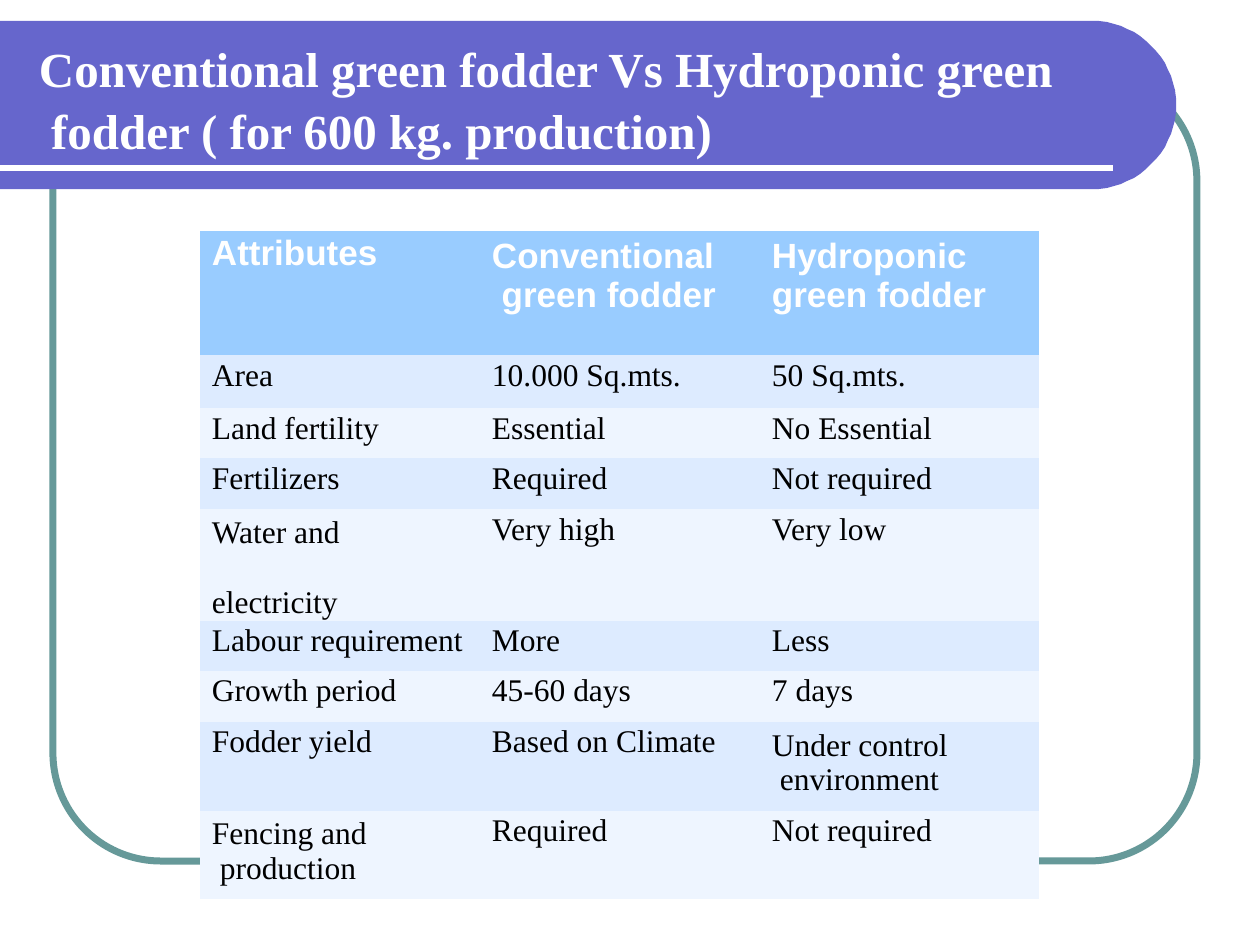
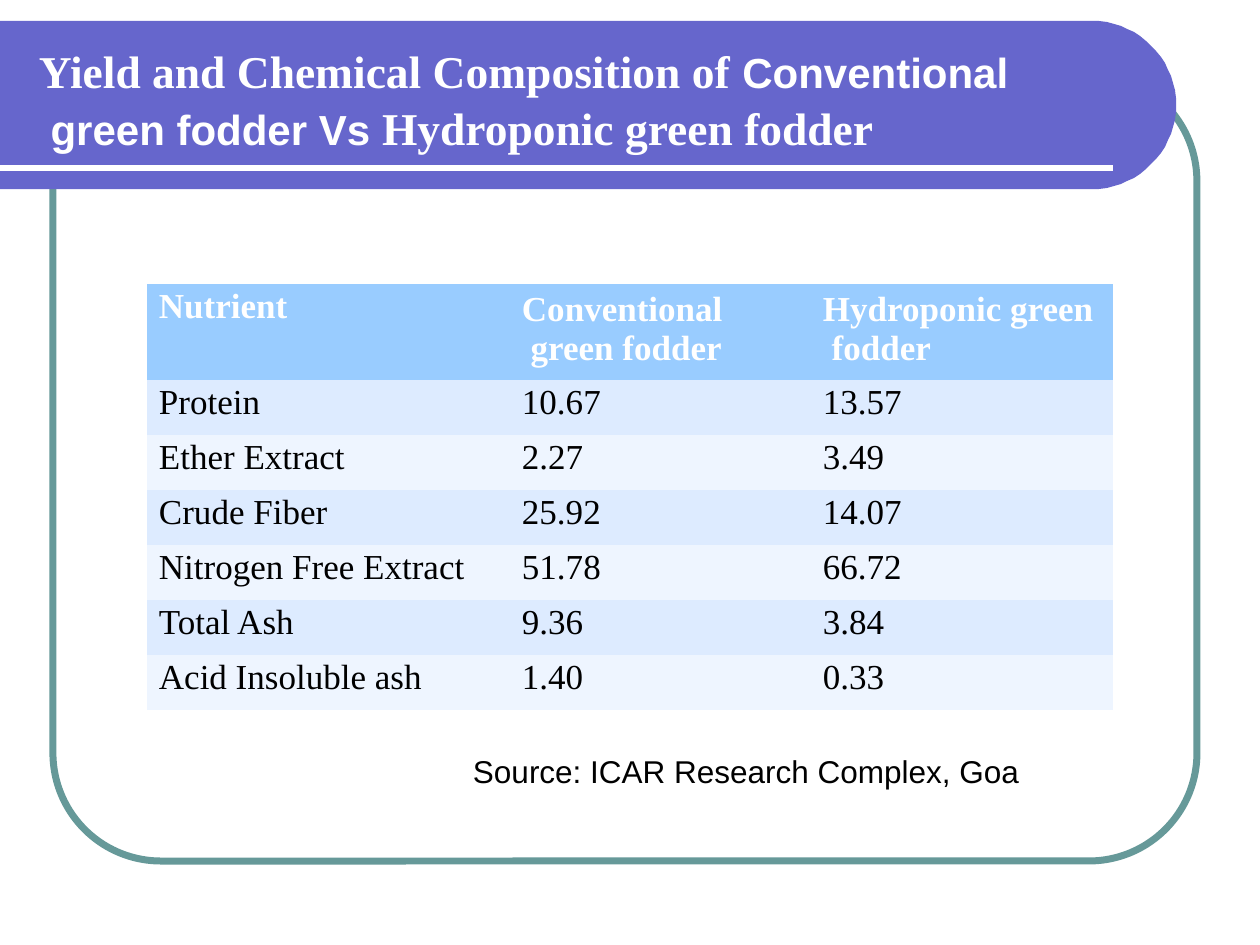
import math

import pptx
import pptx.dml.color
import pptx.enum.shapes
import pptx.oxml.ns
import pptx.util
from lxml import etree

EMU_PER_PX = 914400 / 126
WHITE = pptx.dml.color.RGBColor(0xFF, 0xFF, 0xFF)
BLACK = pptx.dml.color.RGBColor(0x00, 0x00, 0x00)
TEAL = pptx.dml.color.RGBColor(0x66, 0x99, 0x99)
VIOLET = pptx.dml.color.RGBColor(0x66, 0x66, 0xCC)
HEADER_BLUE = pptx.dml.color.RGBColor(0x99, 0xCC, 0xFF)
ROW_BLUES = [pptx.dml.color.RGBColor(0xDD, 0xEB, 0xFF),
             pptx.dml.color.RGBColor(0xEE, 0xF5, 0xFF)]
SERIF, SANS = "Times New Roman", "Arial"
PLAIN_TABLE_STYLE = "{2D5ABB26-0587-4C30-8999-92F81FD0307C}"


def px(length):
    return pptx.util.Emu(round(length * EMU_PER_PX))


def write(paragraph, text, size=18, font=SERIF, color=BLACK, bold=False):
    """Append text to the paragraph; each newline becomes a line break."""
    for i, line in enumerate(text.split("\n")):
        if i:
            paragraph.add_line_break()
        run = paragraph.add_run()
        run.text = line
        run.font.size = pptx.util.Pt(size)
        run.font.name = font
        run.font.color.rgb = color
        run.font.bold = bold


# A newline breaks the line; a double newline starts a spaced paragraph.
pages = [
    {
        "title": [("Conventional green fodder Vs Hydroponic green\n"
                   " fodder ( for 600 kg. production)", 28, SERIF)],
        "title_top": 36,
        "table_at": (200, 231),
        "columns": [278, 266, 295],
        "row_heights": [124, 53, 50, 51, 112, 50, 51, 89, 88],
        "indents": [12, 14, 28],
        "header_font": SANS,
        "body_size": 18,
        "rows": [
            ("Attributes", "Conventional\n green fodder", "Hydroponic\ngreen fodder"),
            ("Area", "10.000 Sq.mts.", "50 Sq.mts."),
            ("Land fertility", "Essential", "No Essential"),
            ("Fertilizers", "Required", "Not required"),
            ("Water and\n\nelectricity", "Very high", "Very low"),
            ("Labour requirement", "More", "Less"),
            ("Growth period", "45-60 days", "7 days"),
            ("Fodder yield", "Based on Climate", "Under control\n environment"),
            ("Fencing and\n production", "Required", "Not required"),
        ],
    },
    {
        "title": [("Yield and Chemical Composition of ", 26, SERIF),
                  ("Conventional\n green fodder Vs ", 24, SANS),
                  ("Hydroponic green fodder", 26, SERIF)],
        "title_top": 40,
        "table_at": (147, 284),
        "columns": [347, 279, 340],
        "row_heights": [96] + [55] * 6,
        "indents": [12, 28, 50],
        "header_font": SERIF,
        "body_size": 20,
        "rows": [
            ("Nutrient", "Conventional\n green fodder", "Hydroponic green\n fodder"),
            ("Protein", "10.67", "13.57"),
            ("Ether Extract", "2.27", "3.49"),
            ("Crude Fiber", "25.92", "14.07"),
            ("Nitrogen Free Extract", "51.78", "66.72"),
            ("Total Ash", "9.36", "3.84"),
            ("Acid Insoluble ash", "1.40", "0.33"),
        ],
        "source": "Source: ICAR Research Complex, Goa",
    },
]

deck = pptx.Presentation()
deck.slide_width, deck.slide_height = px(1260), px(945)

for page in pages:
    slide = deck.slides.add_slide(deck.slide_layouts[6])

    # Rounded frame behind everything
    frame = slide.shapes.add_shape(pptx.enum.shapes.MSO_SHAPE.ROUNDED_RECTANGLE,
                                   px(53), px(73), px(1144), px(788))
    frame.adjustments[0] = 108 / 788
    frame.shadow.inherit = False
    frame.fill.background()
    frame.line.color.rgb = TEAL
    frame.line.width = pptx.util.Pt(4)

    # Title band with a half-circle right end
    radius, center_x, center_y = 84, 1092, 105
    arc = [(center_x + radius * math.cos(math.radians(a)),
            center_y + radius * math.sin(math.radians(a))) for a in range(90, -91, -5)]
    outline = slide.shapes.build_freeform(0, center_y - radius, scale=EMU_PER_PX)
    outline.add_line_segments([(0, center_y + radius)] + arc, close=True)
    band = outline.convert_to_shape()
    band.shadow.inherit = False
    band.fill.solid()
    band.fill.fore_color.rgb = VIOLET
    band.line.fill.background()

    underline = slide.shapes.add_connector(pptx.enum.shapes.MSO_CONNECTOR.STRAIGHT,
                                           px(0), px(168), px(1113), px(168))
    underline.line.color.rgb = WHITE
    underline.line.width = pptx.util.Pt(3)
    etree.SubElement(underline._element.spPr, pptx.oxml.ns.qn("a:effectLst"))

    # Title and source line
    labels = [(39, page["title_top"], 1060, 118, page["title"], WHITE, True, 1.05)]
    if "source" in page:
        labels.append((473, 752, 600, 40, [(page["source"], 18, SANS)], BLACK, False, 1.0))
    for left, top, width, height, runs, color, bold, spacing in labels:
        label = slide.shapes.add_textbox(px(left), px(top), px(width), px(height)).text_frame
        label.word_wrap = True
        label.margin_left = label.margin_top = label.margin_right = label.margin_bottom = 0
        label.paragraphs[0].line_spacing = spacing
        for text, size, font in runs:
            write(label.paragraphs[0], text, size=size, font=font, color=color, bold=bold)

    # Comparison table
    left, top = page["table_at"]
    table = slide.shapes.add_table(
        len(page["rows"]), len(page["columns"]), px(left), px(top),
        px(sum(page["columns"])), px(sum(page["row_heights"]))).table
    table._tbl.tblPr.find(pptx.oxml.ns.qn("a:tableStyleId")).text = PLAIN_TABLE_STYLE
    for column, width in zip(table.columns, page["columns"]):
        column.width = px(width)
    for r, (values, height) in enumerate(zip(page["rows"], page["row_heights"])):
        table.rows[r].height = px(height)
        is_header = r == 0
        size = 20 if is_header else page["body_size"]
        for c, value in enumerate(values):
            cell = table.cell(r, c)
            cell.fill.solid()
            cell.fill.fore_color.rgb = HEADER_BLUE if is_header else ROW_BLUES[(r - 1) % 2]
            cell.margin_left = px(page["indents"][c])
            cell.margin_right = cell.margin_bottom = 0
            cell.margin_top = px(6 if "\n" in value else 3)
            for i, part in enumerate(value.split("\n\n")):
                lines = cell.text_frame.add_paragraph() if i else cell.text_frame.paragraphs[0]
                if "\n" in value:
                    lines.line_spacing = pptx.util.Pt(size * 1.11)
                if i:
                    lines.space_before = pptx.util.Pt(20)
                write(lines, part, size=size, bold=is_header,
                      font=page["header_font"] if is_header else SERIF,
                      color=WHITE if is_header else BLACK)

deck.save("out.pptx")
